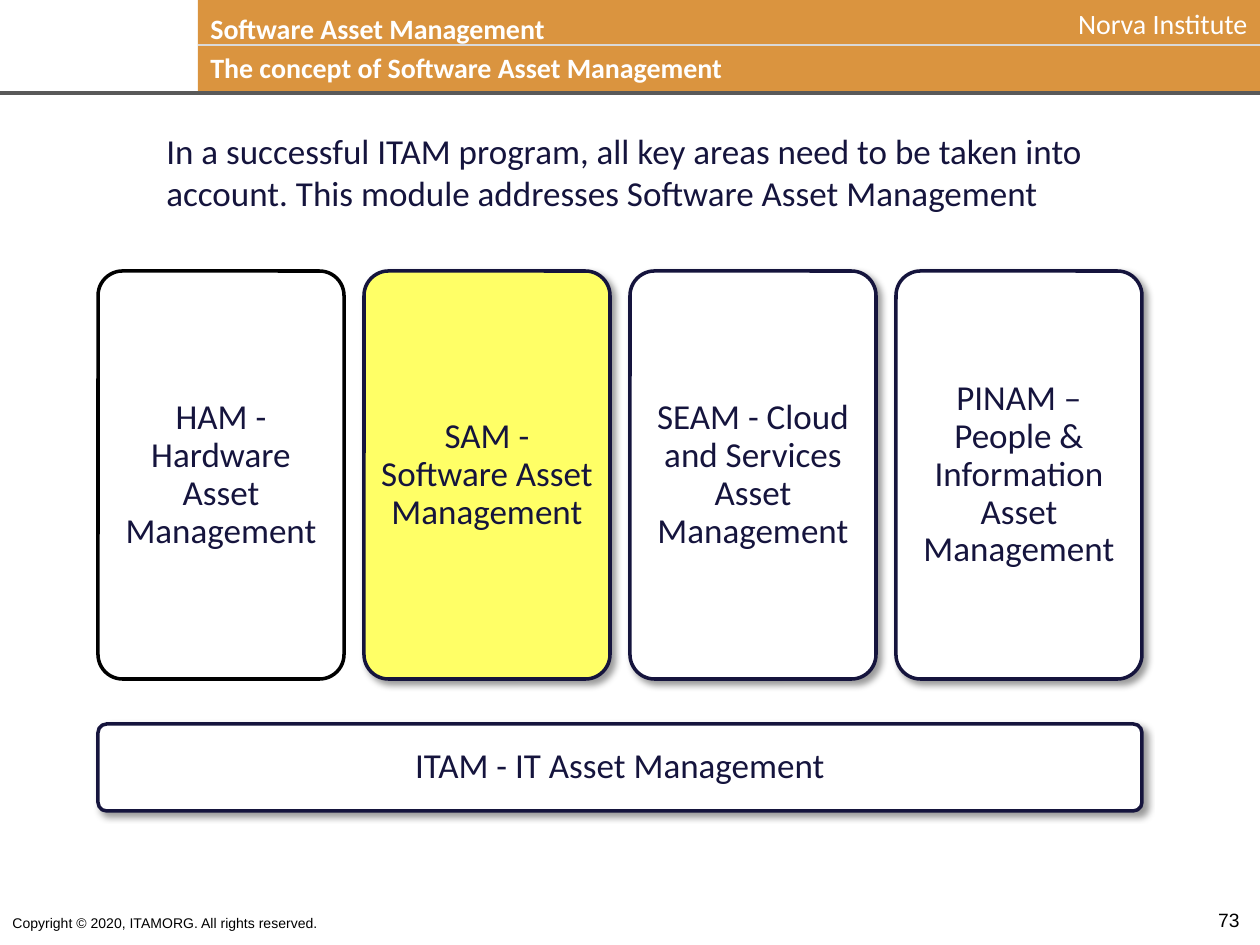
"""Build the Software Asset Management concept slide."""
from lxml import etree
from pptx import Presentation
from pptx.dml.color import RGBColor
from pptx.enum.shapes import MSO_CONNECTOR, MSO_SHAPE
from pptx.enum.text import MSO_ANCHOR, PP_ALIGN
from pptx.oxml import parse_xml
from pptx.oxml.ns import nsdecls, qn
from pptx.util import Pt

LEFT, MID, RIGHT = PP_ALIGN.LEFT, PP_ALIGN.CENTER, PP_ALIGN.RIGHT
RECT, ROUND = MSO_SHAPE.RECTANGLE, MSO_SHAPE.ROUNDED_RECTANGLE
MIDDLE = MSO_ANCHOR.MIDDLE
STRAIGHT = MSO_CONNECTOR.STRAIGHT

COLORS = {
    "white": "FFFFFF", "black": "000000", "navy": "15143D", "orange": "DA943F",
    "yellow": "FFFF66", "dark": "595959", "light": "D9D9D9",
}
LABELS = [
    ("Copyright © 2020, ITAMORG. All rights reserved.",
     (0, 908, 599, 30), "Arial", 8, "black", False, LEFT),
    ("73", (1192, 902, 74, 43), "Arial", 11, "black", False, MID),
    ("Norva Institute", (959, 0, 301, 47), "Calibri", 16, "white", False, RIGHT),
    ("Software Asset Management",
     (198, 5, 870, 37), "Calibri", 16, "white", True, LEFT),
    ("The concept of Software Asset Management",
     (198, 44, 870, 37), "Calibri", 16, "white", True, LEFT),
    ("In a successful ITAM program, all key areas need to be taken into account. "
     "This module addresses Software Asset Management",
     (154, 123, 1056, 97), "Calibri", 20, "navy", False, LEFT),
]
RULES = [((0, 93, 1260, 93), "dark", 2.25), ((198, 45, 1261, 45), "light", 0.75)]
BASE = "ITAM - IT Asset Management"
AREAS = [
    ("HAM - Hardware Asset Management", "white", "black", False),
    ("SAM - Software Asset Management", "yellow", "navy", True),
    ("SEAM - Cloud and Services Asset Management", "white", "navy", True),
    ("PINAM – People & Information Asset Management", "white", "navy", True),
]
X, Y, WIDE, HIGH, GAP = 98, 271, 246, 408, 20
BASE_Y, BASE_H = 724, 87
INSET = 10
SHADOW = (
    f'<a:effectLst {nsdecls("a")}><a:outerShdw blurRad="50800" dist="38100" '
    'dir="2700000" algn="tl" rotWithShape="0"><a:srgbClr val="000000">'
    '<a:alpha val="40000"/></a:srgbClr></a:outerShdw></a:effectLst>'
)


def px(n):
    return round(n * 914400 / 126)


def spot(box):
    return [px(n) for n in box]


def tint(name):
    return RGBColor.from_string(COLORS[name])


def write(frame, text, font, size, color, bold, align):
    frame.word_wrap = True
    frame.text = text
    para = frame.paragraphs[0]
    para.alignment = align
    style = para.runs[0].font
    style.name, style.size, style.bold = font, Pt(size), bold
    style.color.rgb = tint(color)
    return para


def block(shapes, kind, box, fill):
    shape = shapes.add_shape(kind, *spot(box))
    shape.shadow.inherit = False
    shape.fill.solid()
    shape.fill.fore_color.rgb = tint(fill)
    return shape


def card(shapes, box, text, fill, edge, shade):
    shape = block(shapes, ROUND, box, fill)
    shape.adjustments[0] = 0.1
    shape.line.color.rgb = tint(edge)
    shape.line.width = Pt(2)
    if shade:
        props = shape._element.spPr
        props.replace(props.find(qn("a:effectLst")), parse_xml(SHADOW))
    frame = shape.text_frame
    frame.vertical_anchor = MIDDLE
    frame.margin_left = frame.margin_right = px(INSET)
    frame.margin_top = frame.margin_bottom = px(INSET)
    para = write(frame, text, "Calibri", 20, "navy", False, MID)
    para.line_spacing = 0.9


def main():
    deck = Presentation()
    deck.slide_width, deck.slide_height = px(1260), px(945)
    shapes = deck.slides.add_slide(deck.slide_layouts[6]).shapes

    band = block(shapes, RECT, (198, -1, 1063, 93), "orange")
    band.line.fill.background()
    for ends, color, width in RULES:
        rule = shapes.add_connector(STRAIGHT, *spot(ends))
        rule.line.color.rgb = tint(color)
        rule.line.width = Pt(width)
        etree.SubElement(rule._element.spPr, qn("a:effectLst"))

    for text, box, *style in LABELS:
        write(shapes.add_textbox(*spot(box)).text_frame, text, *style)

    step = WIDE + GAP
    span = len(AREAS) * step - GAP
    card(shapes, (X, BASE_Y, span, BASE_H), BASE, "white", "navy", True)
    for i, area in enumerate(AREAS):
        card(shapes, (X + i * step, Y, WIDE, HIGH), *area)

    deck.save("out.pptx")


if __name__ == "__main__":
    main()
